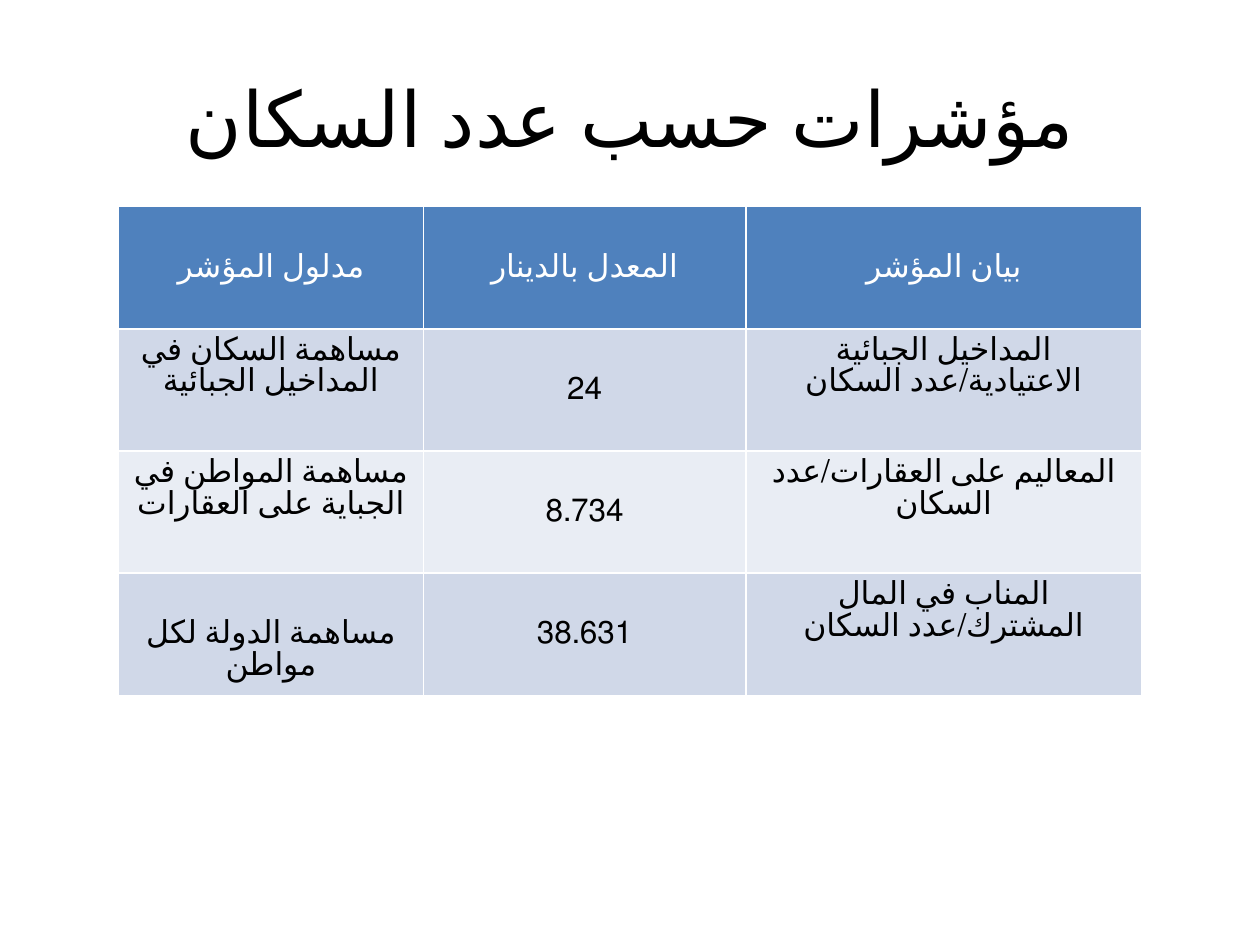
"""Build a slide with a table of indicators by population."""
from dataclasses import dataclass

from pptx import Presentation
from pptx.dml.color import RGBColor
from pptx.enum.lang import MSO_LANGUAGE_ID
from pptx.enum.text import MSO_ANCHOR, PP_ALIGN
from pptx.util import Inches, Pt

ARABIC = MSO_LANGUAGE_ID.ARABIC_TUNISIA
CENTER = PP_ALIGN.CENTER
TOP, MIDDLE = MSO_ANCHOR.TOP, MSO_ANCHOR.MIDDLE


@dataclass(frozen=True)
class Theme:
    font: str = "Calibri"
    title_size: int = 44
    body_size: int = 18
    ink: str = "000000"
    header_ink: str = "FFFFFF"
    header_fill: str = "4F81BD"
    bands: tuple[str, str] = ("D0D8E8", "E9EDF4")


@dataclass(frozen=True)
class Entry:
    text: str
    lowered: bool = False


THEME = Theme()
TITLE = "مؤشرات حسب عدد السكان"
COLUMN_WIDTHS = (2.42, 2.56, 3.14)
ROW_HEIGHT = 0.97
TOP_MARGIN = 0.05
LOWERED_MARGIN = 0.36
INDICATORS = (
    (
        Entry("مدلول المؤشر", True),
        Entry("المعدل بالدينار", True),
        Entry("بيان المؤشر", True),
    ),
    (
        Entry("مساهمة السكان في المداخيل الجبائية"),
        Entry("24", True),
        Entry("المداخيل الجبائية الاعتيادية/عدد السكان"),
    ),
    (
        Entry("مساهمة المواطن في الجباية على العقارات"),
        Entry("8.734", True),
        Entry("المعاليم على العقارات/عدد السكان"),
    ),
    (
        Entry("مساهمة الدولة لكل مواطن", True),
        Entry("38.631", True),
        Entry("المناب في المال المشترك/عدد السكان"),
    ),
)


def write(paragraph, text: str, size: int, color: str) -> None:
    """Add one centred Arabic run in the theme font."""
    paragraph.alignment = CENTER
    run = paragraph.add_run()
    run.text = text
    run.font.language_id = ARABIC
    run.font.name = THEME.font
    run.font.size = Pt(size)
    run.font.bold = False
    run.font.color.rgb = RGBColor.from_string(color)


def add_title(slide) -> None:
    """Draw the slide heading."""
    heading = slide.shapes.add_textbox(Inches(0.5), Inches(0.3), Inches(9), Inches(1.25))
    heading.text_frame.word_wrap = True
    heading.text_frame.vertical_anchor = MIDDLE
    write(heading.text_frame.paragraphs[0], TITLE, THEME.title_size, THEME.ink)


def fill_cell(cell, entry: Entry, fill: str, ink: str) -> None:
    """Colour a cell and write its right-to-left text."""
    cell.fill.solid()
    cell.fill.fore_color.rgb = RGBColor.from_string(fill)
    cell.vertical_anchor = TOP
    cell.margin_top = Inches(LOWERED_MARGIN if entry.lowered else TOP_MARGIN)
    paragraph = cell.text_frame.paragraphs[0]
    write(paragraph, entry.text, THEME.body_size, ink)
    paragraph._p.get_or_add_pPr().set("rtl", "1")


def add_indicators(slide) -> None:
    """Draw the indicator table with a header and banded rows."""
    row_count = len(INDICATORS)
    table = slide.shapes.add_table(
        row_count, len(COLUMN_WIDTHS), Inches(0.94), Inches(1.64),
        Inches(sum(COLUMN_WIDTHS)), Inches(ROW_HEIGHT * row_count),
    ).table
    for column, width in zip(table.columns, COLUMN_WIDTHS):
        column.width = Inches(width)
    for index, (row, entries) in enumerate(zip(table.rows, INDICATORS)):
        row.height = Inches(ROW_HEIGHT)
        fill = THEME.bands[(index - 1) % 2] if index else THEME.header_fill
        ink = THEME.ink if index else THEME.header_ink
        for cell, entry in zip(row.cells, entries):
            fill_cell(cell, entry, fill, ink)


def main() -> None:
    """Build and save the presentation."""
    presentation = Presentation()
    presentation.slide_width = Inches(10)
    presentation.slide_height = Inches(7.5)
    slide = presentation.slides.add_slide(presentation.slide_layouts[6])
    add_indicators(slide)
    add_title(slide)
    presentation.save("out.pptx")


if __name__ == "__main__":
    main()
